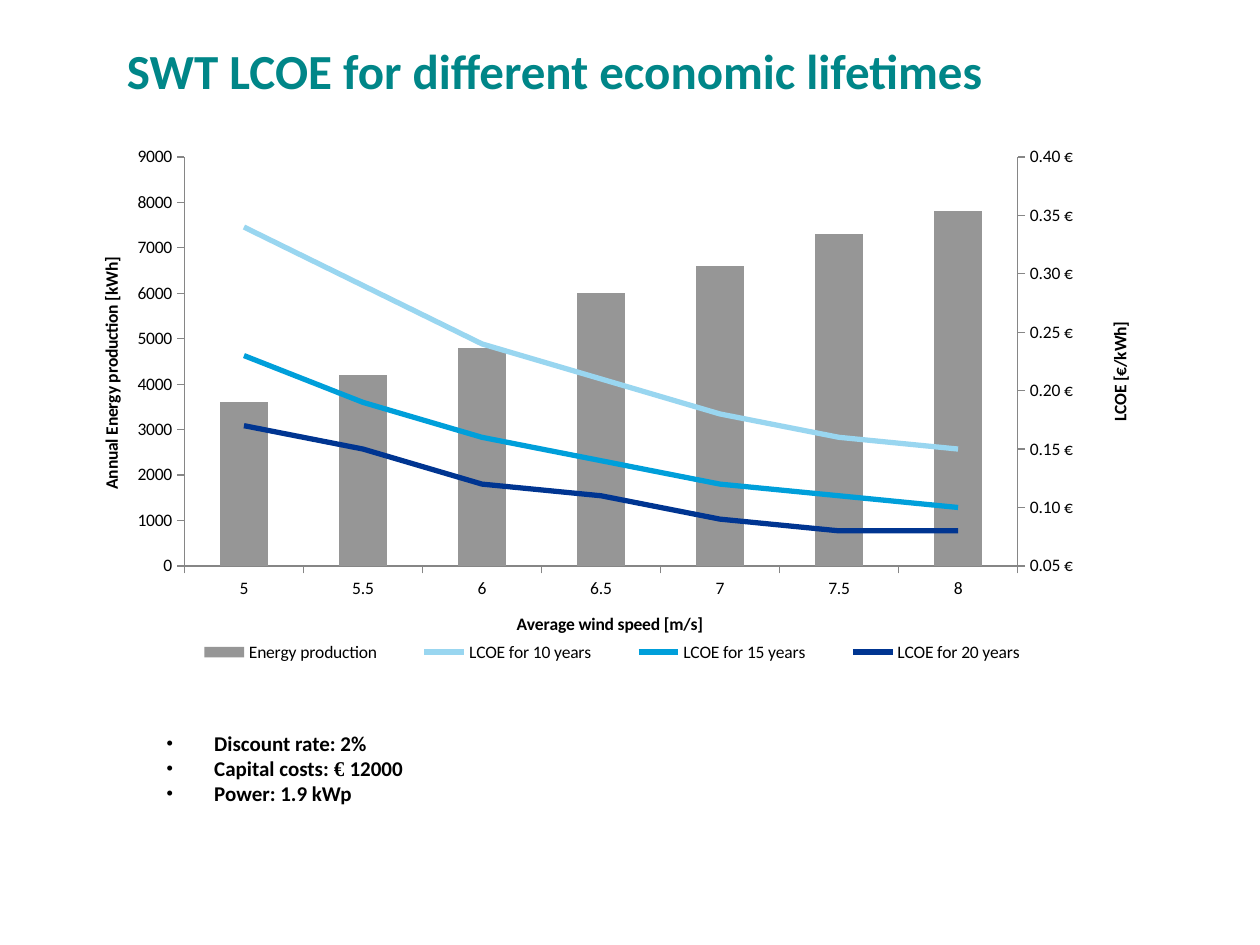
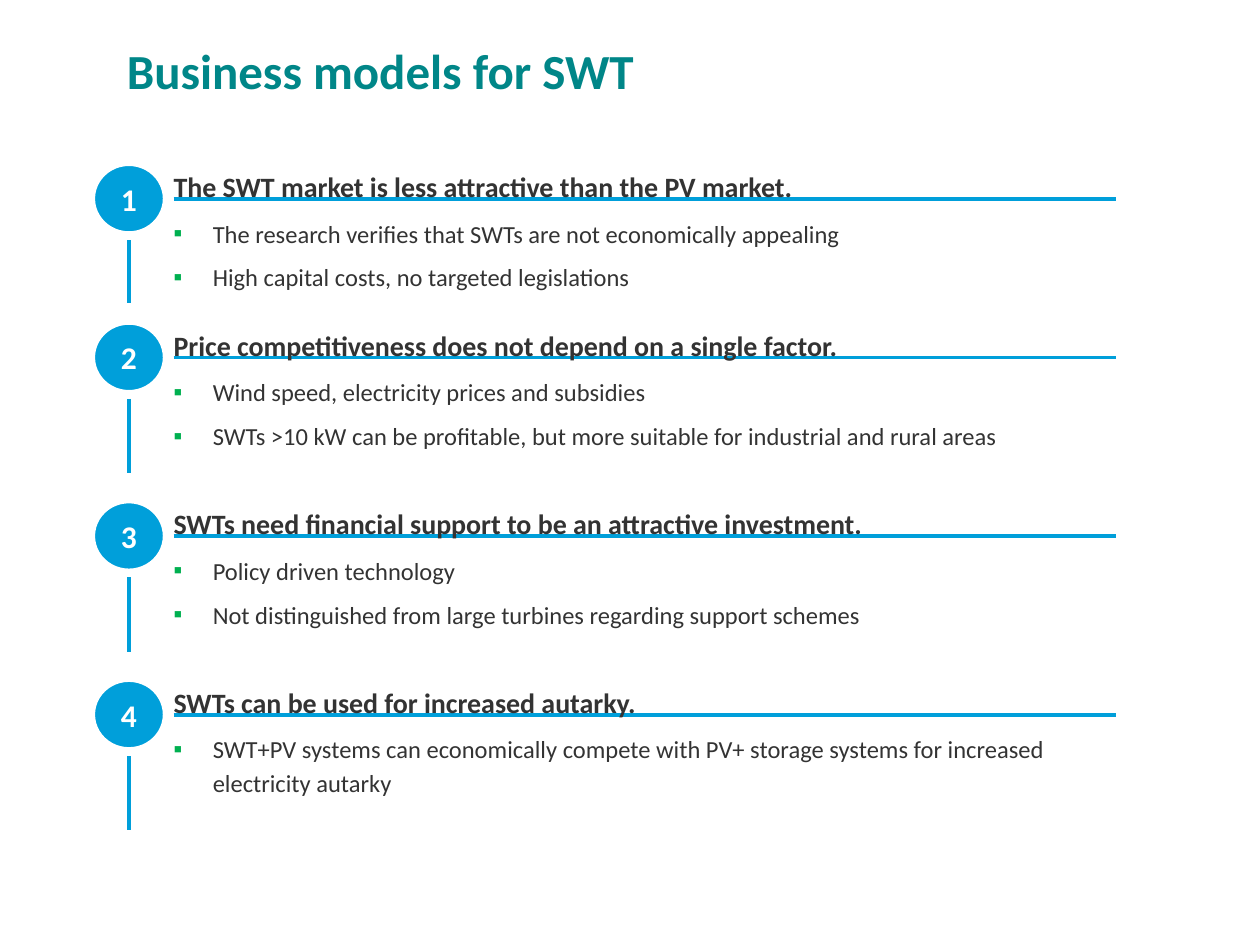
from copy import deepcopy

from pptx import Presentation
from pptx.chart.axis import CategoryAxis, ValueAxis
from pptx.chart.data import CategoryChartData
from pptx.dml.color import RGBColor
from pptx.enum.chart import XL_CHART_TYPE, XL_LEGEND_POSITION, XL_MARKER_STYLE, XL_TICK_MARK
from pptx.enum.shapes import MSO_CONNECTOR, MSO_SHAPE
from pptx.enum.text import MSO_ANCHOR, PP_ALIGN
from pptx.oxml import parse_xml
from pptx.oxml.ns import nsdecls, qn
from pptx.util import Cm, Pt

TEAL = RGBColor(0x00, 0x86, 0x88)
BLUE = RGBColor(0x00, 0x9F, 0xDA)
LIGHT_BLUE = RGBColor(0x99, 0xD6, 0xF0)
NAVY = RGBColor(0x00, 0x35, 0x91)
GREEN = RGBColor(0x00, 0xB0, 0x50)
GRAY = RGBColor(0x96, 0x96, 0x96)
AXIS_GRAY = RGBColor(0x86, 0x86, 0x86)
DARK = RGBColor(0x33, 0x33, 0x33)
BLACK = RGBColor(0, 0, 0)
WHITE = RGBColor(0xFF, 0xFF, 0xFF)
FONT = "Calibri"
SERIF = "Times New Roman"


def add_text(shapes, box, paragraphs, size, color, bold=False, inset=None, spacing=None,
             before=0, bullet=None, bullet_color=BLACK, bullet_font=FONT, indent=0):
    """Add a text box; each paragraph is a list of (text, font) runs."""
    frame = shapes.add_textbox(*[Cm(length) for length in box]).text_frame
    frame.word_wrap = True
    if inset is not None:
        frame.margin_left = frame.margin_right = frame.margin_top = frame.margin_bottom = Cm(inset)
    for index, runs in enumerate(paragraphs):
        paragraph = frame.add_paragraph() if index else frame.paragraphs[0]
        if bullet:
            properties = paragraph._p.get_or_add_pPr()
            properties.set("marL", str(Cm(indent)))
            properties.set("indent", str(-Cm(indent)))
            for xml in (f'<a:buClr {nsdecls("a")}><a:srgbClr val="{bullet_color}"/></a:buClr>',
                        f'<a:buFont {nsdecls("a")} typeface="{bullet_font}"/>',
                        f'<a:buChar {nsdecls("a")} char="{bullet}"/>'):
                properties.append(parse_xml(xml))
        if spacing:
            paragraph.line_spacing = spacing
        if index and before:
            paragraph.space_before = Pt(before)
        for text, font_name in runs:
            run = paragraph.add_run()
            run.text = text
            run.font.name = font_name
            run.font.size = Pt(size)
            run.font.bold = bold
            run.font.color.rgb = color
    return frame


def set_layout(element, position, **fractions):
    """Place a chart part by fractions of the chart area."""
    for old_layout in element.findall(qn("c:layout")):
        element.remove(old_layout)
    modes = "".join(f'<c:{side}Mode val="edge"/>' for side in "xy")
    target = '<c:layoutTarget val="inner"/>' if element.tag == qn("c:plotArea") else ""
    values = "".join(f'<c:{side} val="{value}"/>' for side, value in fractions.items())
    element.insert(position, parse_xml(
        f'<c:layout {nsdecls("c")}><c:manualLayout>{target}{modes}{values}</c:manualLayout></c:layout>'))


presentation = Presentation()
presentation.slide_width = Cm(25.4)
presentation.slide_height = Cm(19.05)

# Slides with their shared title style
slides = []
for title in ("SWT LCOE for different economic lifetimes", "Business models for SWT"):
    slide = presentation.slides.add_slide(presentation.slide_layouts[6])
    frame = add_text(slide.shapes, (2.31, 0, 22.8, 2.92), [[(title, FONT)]], 28, TEAL,
                     bold=True, spacing=Pt(31))
    frame.vertical_anchor = MSO_ANCHOR.MIDDLE
    slides.append(slide)
chart_slide, models_slide = slides

# Slide 1: assumptions
add_text(chart_slide.shapes, (3.1, 14.6, 19.1, 1.8),
         [[("Discount rate: 2%", FONT)],
          [("Capital costs: ", FONT), ("€ ", SERIF), ("12000", FONT)],
          [("Power: 1.9 kWp", FONT)]],
         12, BLACK, bold=True, bullet="•", bullet_font=SERIF, indent=0.97)

# Slide 1: energy columns and cost lines
chart_data = CategoryChartData()
chart_data.categories = ["5", "5.5", "6", "6.5", "7", "7.5", "8"]
chart_data.add_series("Energy production", [3600, 4200, 4800, 6000, 6600, 7300, 7800])
chart_data.add_series("LCOE for 10 years", [0.34, 0.29, 0.24, 0.21, 0.18, 0.16, 0.15])
chart_data.add_series("LCOE for 15 years", [0.23, 0.19, 0.16, 0.14, 0.12, 0.11, 0.10])
chart_data.add_series("LCOE for 20 years", [0.17, 0.15, 0.12, 0.11, 0.09, 0.08, 0.08])
chart = chart_slide.shapes.add_chart(XL_CHART_TYPE.COLUMN_CLUSTERED, Cm(1.73), Cm(2.84),
                                     Cm(22.1), Cm(10.85), chart_data).chart
chart.has_title = False
chart.font.name = FONT
chart.font.size = Pt(10)
chart.font.color.rgb = BLACK
columns = chart.plots[0]
columns.gap_width = 150
columns.vary_by_categories = False
columns.series[0].format.fill.solid()
columns.series[0].format.fill.fore_color.rgb = GRAY

# Left axes, held by name because the chart gains a second pair
speed_axis = chart.category_axis
energy_axis = chart.value_axis
for axis in (speed_axis, energy_axis):
    axis.has_major_gridlines = False
    axis.major_tick_mark = XL_TICK_MARK.OUTSIDE
    axis.format.line.color.rgb = AXIS_GRAY
    axis.tick_labels.number_format = "General"
    axis.tick_labels.number_format_is_linked = False

# Right axes
right_category_element = deepcopy(speed_axis._element)
right_value_element = deepcopy(energy_axis._element)
for element, axis_id, cross_id in ((right_category_element, "5001", "5002"),
                                   (right_value_element, "5002", "5001")):
    element.find(qn("c:axId")).set("val", axis_id)
    element.find(qn("c:crossAx")).set("val", cross_id)
right_value_element.find(qn("c:axPos")).set("val", "r")
right_value_element.find(qn("c:crosses")).set("val", "max")
energy_axis._element.addnext(right_value_element)
right_value_element.addnext(right_category_element)
CategoryAxis(right_category_element).visible = False
cost_axis = ValueAxis(right_value_element)
cost_axis.tick_labels.number_format = '0.00 "€"'
for axis, low, high, step in ((energy_axis, 0, 9000, 1000), (cost_axis, 0.05, 0.4, 0.05)):
    axis.minimum_scale = low
    axis.maximum_scale = high
    axis.major_unit = step

# The cost series become lines on the right axes
column_element = columns._element
line_element = parse_xml(
    f'<c:lineChart {nsdecls("c")}><c:grouping val="standard"/><c:varyColors val="0"/>'
    '<c:marker val="1"/><c:axId val="5001"/><c:axId val="5002"/></c:lineChart>')
column_element.addnext(line_element)
line_marker = line_element.find(qn("c:marker"))
for series_element in column_element.findall(qn("c:ser"))[1:]:
    for invert in series_element.findall(qn("c:invertIfNegative")):
        series_element.remove(invert)
    line_marker.addprevious(series_element)
for series, color in zip(chart.plots[1].series, (LIGHT_BLUE, BLUE, NAVY)):
    series.smooth = False
    series.marker.style = XL_MARKER_STYLE.NONE
    series.format.line.color.rgb = color
    series.format.line.width = Pt(3)

# Axis titles, legend and plot area
for axis, title, left, top in ((speed_axis, "Average wind speed [m/s]", 0.39, 0.87),
                               (energy_axis, "Annual Energy production [kWh]", 0.01, 0.21),
                               (cost_axis, "LCOE [€/kWh]", 0.93, 0.33)):
    frame = axis.axis_title.text_frame
    run = frame.paragraphs[0].add_run()
    run.text = title
    run.font.name = FONT
    run.font.size = Pt(10)
    run.font.bold = True
    run.font.color.rgb = BLACK
    if axis is not speed_axis:
        frame._txBody.bodyPr.set("rot", "-5400000")
        frame._txBody.bodyPr.set("vert", "horz")
    set_layout(axis.axis_title._element, 1, x=left, y=top)
chart.has_legend = True
chart.legend.position = XL_LEGEND_POSITION.BOTTOM
chart.legend.include_in_layout = False
set_layout(chart.legend._element, 1, x=0.07, y=0.92, w=0.82, h=0.06)
set_layout(column_element.getparent(), 0, x=0.09, y=0.03, w=0.76, h=0.76)

# Slide 2: numbered findings (top, spine length, heading, points)
findings = [
    (3.33, 1.27, "The SWT market is less attractive than the PV market.",
     ["The research verifies that SWTs are not economically appealing",
      "High capital costs, no targeted legislations"]),
    (6.53, 1.5, "Price competitiveness does not depend on a single factor.",
     ["Wind speed, electricity prices and subsidies",
      "SWTs >10 kW can be profitable, but more suitable for industrial and rural areas"]),
    (10.13, 1.5, "SWTs need financial support to be an attractive investment.",
     ["Policy driven technology",
      "Not distinguished from large turbines regarding support schemes"]),
    (13.73, 1.5, "SWTs can be used for increased autarky.",
     ["SWT+PV systems can economically compete with PV+ storage systems"
      " for increased electricity autarky"]),
]
for number, (top, spine, heading, points) in enumerate(findings, 1):
    shapes = models_slide.shapes.add_group_shape().shapes

    # Number badge
    badge = shapes.add_shape(MSO_SHAPE.OVAL, Cm(1.9), Cm(top), Cm(1.4), Cm(1.35))
    badge.shadow.inherit = False
    badge.fill.solid()
    badge.fill.fore_color.rgb = BLUE
    badge.line.color.rgb = WHITE
    badge.line.width = Pt(1)
    badge.text_frame.word_wrap = False
    badge.text_frame.vertical_anchor = MSO_ANCHOR.MIDDLE
    paragraph = badge.text_frame.paragraphs[0]
    paragraph.alignment = PP_ALIGN.CENTER
    run = paragraph.add_run()
    run.text = str(number)
    run.font.name = FONT
    run.font.size = Pt(18)
    run.font.bold = True
    run.font.color.rgb = WHITE

    # Rule under the heading and spine under the badge
    for ends in ((3.5, top + 0.68, 22.5, top + 0.68),
                 (2.6, top + 1.51, 2.6, top + 1.51 + spine)):
        line = shapes.add_connector(MSO_CONNECTOR.STRAIGHT, *[Cm(length) for length in ends])
        line.line.color.rgb = BLUE
        line.line.width = Pt(2)
        line._element.spPr.append(parse_xml(f'<a:effectLst {nsdecls("a")}/>'))

    # Points and heading
    add_text(shapes, (3.5, top + 1, 19, 1.57), [[(point, FONT)] for point in points], 14, DARK,
             inset=0, spacing=1.13, before=6, bullet="▪", bullet_color=GREEN, indent=0.79)
    add_text(shapes, (3.5, top, 20.8, 0.69), [[(heading, FONT)]], 16, DARK, bold=True,
             inset=0, spacing=1.13)

presentation.save("out.pptx")
